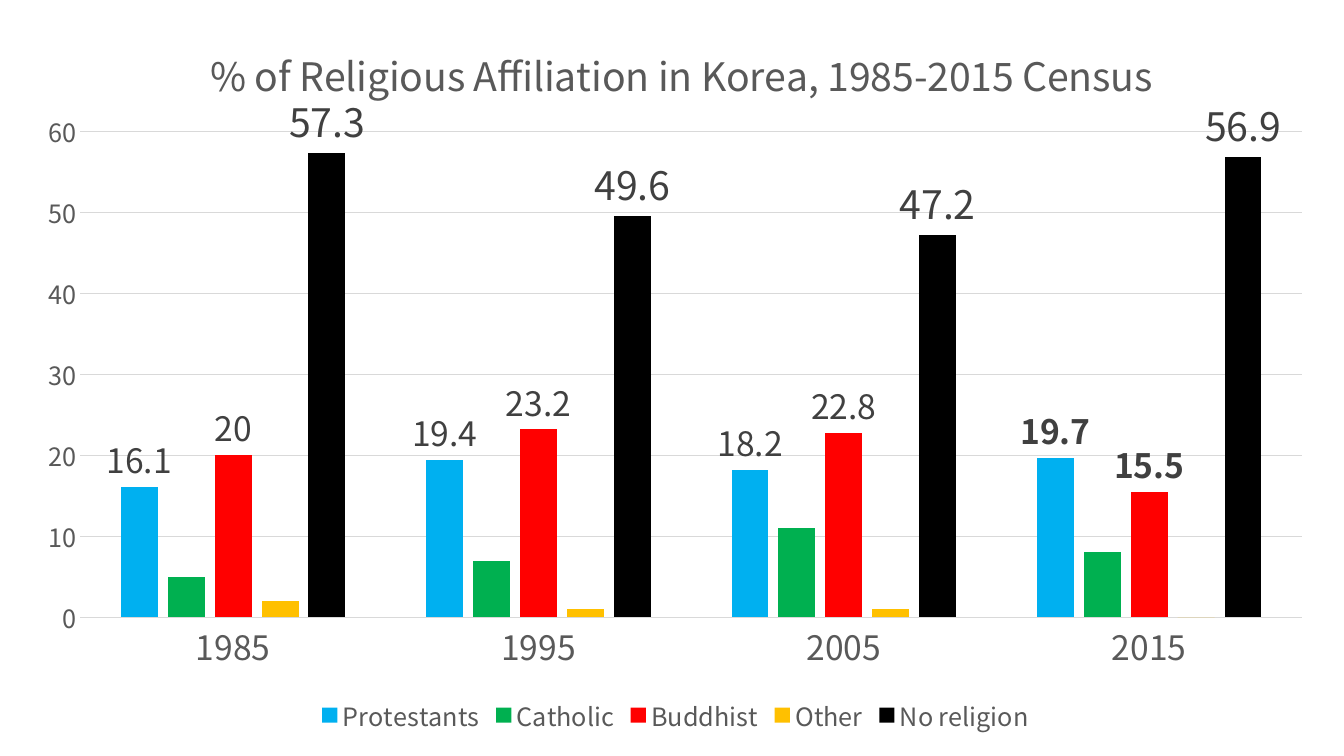
from dataclasses import dataclass

from lxml import etree
from pptx import Presentation
from pptx.chart.data import CategoryChartData
from pptx.dml.color import RGBColor
from pptx.enum.chart import XL_CHART_TYPE as ChartType
from pptx.enum.chart import XL_LABEL_POSITION as LabelPosition
from pptx.enum.chart import XL_LEGEND_POSITION as LegendPosition
from pptx.enum.chart import XL_TICK_MARK as TickMark
from pptx.oxml.ns import qn
from pptx.util import Pt


@dataclass(frozen=True)
class Theme:
    font: str = "Noto Sans CJK KR"
    text: str = "595959"
    label: str = "404040"
    rule: str = "D9D9D9"
    rule_width: float = 0.75
    title_size: int = 28
    year_size: int = 24
    small_size: int = 18
    label_size: int = 24
    highlight_size: int = 28


@dataclass(frozen=True)
class Affiliation:
    name: str
    shares: tuple
    color: str
    label_size: int = 0
    bold_years: tuple = ()


@dataclass(frozen=True)
class Box:
    """A place on the slide, in points."""
    left: float
    top: float
    width: float = 0
    height: float = 0


THEME = Theme()
TITLE = "% of Religious Affiliation in Korea, 1985-2015 Census"
YEARS = ("1985", "1995", "2005", "2015")
AFFILIATIONS = (
    Affiliation("Protestants", (16.1, 19.4, 18.2, 19.7), "00B0F0",
                THEME.label_size, ("2015",)),
    Affiliation("Catholic", (5, 7, 11, 8), "00B050"),
    Affiliation("Buddhist", (20, 23.2, 22.8, 15.5), "FF0000",
                THEME.label_size, ("2015",)),
    Affiliation("Other", (2, 1, 1, 0), "FFC000"),
    Affiliation("No religion", (57.3, 49.6, 47.2, 56.9), "000000",
                THEME.highlight_size),
)
CHART = Box(16, 8.6, 933, 519)
PLOT = Box(57.5, 94, 872.5, 347)
HEADING = Box(145, 25)


def style_font(font, size, color, bold=False):
    font.name = THEME.font
    font.size = Pt(size)
    font.bold = bold
    font.color.rgb = RGBColor.from_string(color)


def place_part(part, box, index, **target):
    """Put a chart part at a fixed place, given in points on the slide."""
    for automatic in part.findall(qn("c:layout")):
        part.remove(automatic)
    layout = etree.Element(qn("c:layout"))
    part.insert(index, layout)
    manual = etree.SubElement(layout, qn("c:manualLayout"))
    settings = {
        **target,
        "xMode": "edge",
        "yMode": "edge",
        "x": (box.left - CHART.left) / CHART.width,
        "y": (box.top - CHART.top) / CHART.height,
    }
    if box.width:
        settings.update(w=box.width / CHART.width, h=box.height / CHART.height)
    for tag, value in settings.items():
        etree.SubElement(manual, qn(f"c:{tag}")).set("val", str(value))


def add_title(chart):
    chart.has_title = True
    title = chart.chart_title
    title.include_in_layout = False
    heading = title.text_frame.paragraphs[0].add_run()
    heading.text = TITLE
    style_font(heading.font, THEME.title_size, THEME.text)
    place_part(title._element, HEADING, 1)


def style_axes(chart):
    years, percent = chart.category_axis, chart.value_axis
    for axis, size in ((years, THEME.year_size), (percent, THEME.small_size)):
        axis.major_tick_mark = axis.minor_tick_mark = TickMark.NONE
        style_font(axis.tick_labels.font, size, THEME.text)
    style_rule = percent.major_gridlines.format.line, years.format.line
    for line in style_rule:
        line.color.rgb = RGBColor.from_string(THEME.rule)
        line.width = Pt(THEME.rule_width)
    percent.format.line.fill.background()
    percent.minimum_scale, percent.maximum_scale, percent.major_unit = 0, 60, 10


def style_legend(chart):
    chart.has_legend = True
    chart.legend.position = LegendPosition.BOTTOM
    chart.legend.include_in_layout = False
    style_font(chart.legend.font, THEME.small_size, THEME.text)


def style_series(series, affiliation):
    series.format.fill.solid()
    series.format.fill.fore_color.rgb = RGBColor.from_string(affiliation.color)
    series.invert_if_negative = False
    if not affiliation.label_size:
        return
    labels = series.data_labels
    labels.show_value = True
    labels.position = LabelPosition.OUTSIDE_END
    style_font(labels.font, affiliation.label_size, THEME.label)
    for year in affiliation.bold_years:
        label = series.points[YEARS.index(year)].data_label
        style_font(label.font, affiliation.label_size, THEME.label, bold=True)
        label.position = LabelPosition.OUTSIDE_END


def add_census_chart(slide):
    census = CategoryChartData()
    census.categories = YEARS
    for affiliation in AFFILIATIONS:
        census.add_series(affiliation.name, affiliation.shares)
    chart = slide.shapes.add_chart(
        ChartType.COLUMN_CLUSTERED, Pt(CHART.left), Pt(CHART.top),
        Pt(CHART.width), Pt(CHART.height), census
    ).chart
    chart.font.name = THEME.font
    chart.font.size = Pt(10)
    add_title(chart)
    style_axes(chart)
    style_legend(chart)
    columns = chart.plots[0]
    columns.gap_width, columns.overlap = 219, -27
    columns.vary_by_categories = False
    for series, affiliation in zip(columns.series, AFFILIATIONS):
        style_series(series, affiliation)
    place_part(columns._element.getparent(), PLOT, 0, layoutTarget="inner")


def main():
    deck = Presentation()
    deck.slide_width, deck.slide_height = Pt(960), Pt(540)
    blank_layout = deck.slide_layouts[6]
    add_census_chart(deck.slides.add_slide(blank_layout))
    deck.save("out.pptx")


if __name__ == "__main__":
    main()
